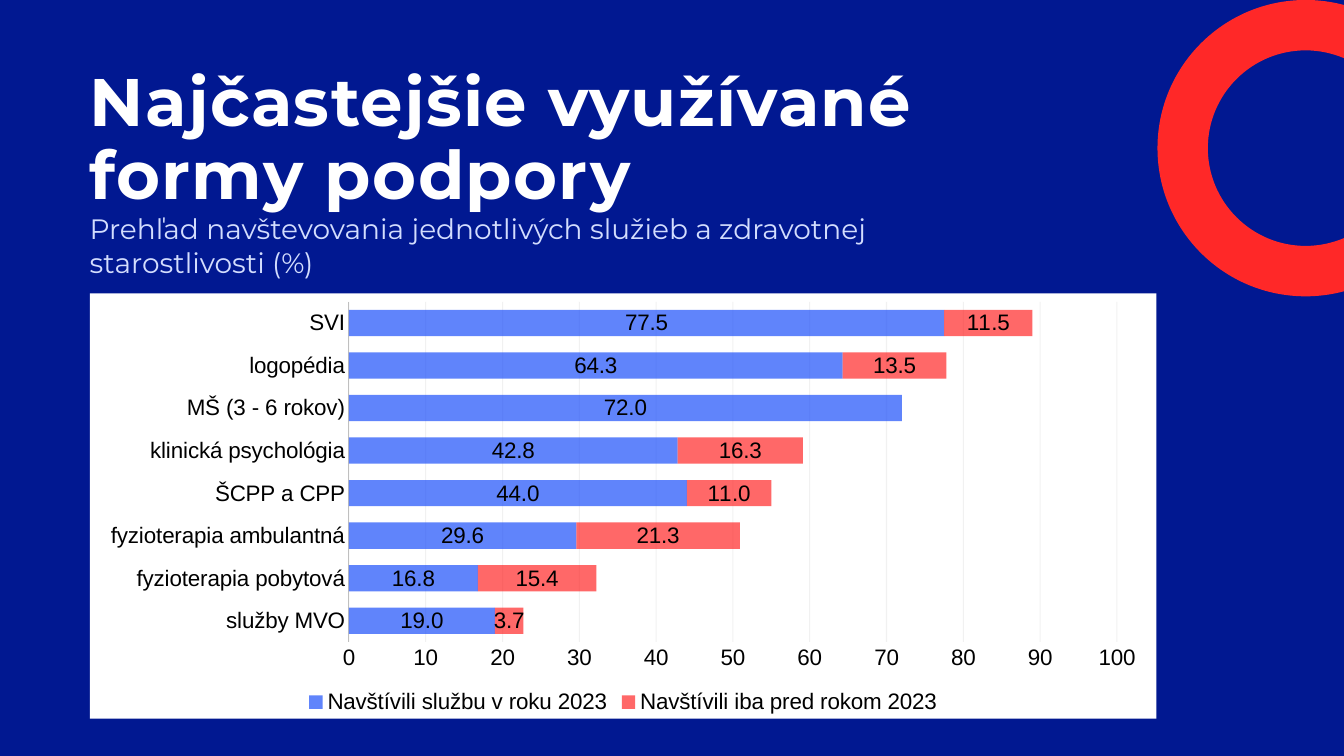
from math import acos, cos, pi, sin, tan
from lxml.etree import SubElement
from pptx import Presentation
from pptx.chart.data import CategoryChartData
from pptx.dml.color import RGBColor
from pptx.enum.chart import XL_CHART_TYPE, XL_LABEL_POSITION, XL_LEGEND_POSITION, XL_TICK_MARK
from pptx.oxml import parse_xml
from pptx.oxml.ns import nsdecls, qn
from pptx.util import Inches, Pt


def paint(fill, tone, alpha=100):
    fill.solid()
    fill.fore_color.rgb = RGBColor.from_string(tone)
    if alpha < 100:
        node = fill.fore_color._xFill[0]
        SubElement(node, qn("a:alpha")).set("val", str(alpha * 1000))


def write(box, text, size, tone, bold=False):
    frame = slide.shapes.add_textbox(*[Inches(n) for n in box]).text_frame
    frame.word_wrap = True
    run = frame.paragraphs[0].add_run()
    run.text = text
    run.font.name = "Montserrat"
    run.font.size = Pt(size)
    run.font.bold = bold
    paint(run.font.fill, tone)
    return frame


WIDE, HIGH = 13.33, 7.5
deck = Presentation()
deck.slide_width, deck.slide_height = Inches(WIDE), Inches(HIGH)
slide = deck.slides.add_slide(deck.slide_layouts[6])
paint(slide.background.fill, "011891")

mid_x, mid_y = 12.95, 1.47
ring = []
for radius, way in ((1.47, 1), (0.97, -1)):
    edge = acos((WIDE - mid_x) / radius)
    knots = [edge, pi / 2, pi, 3 * pi / 2, 2 * pi - edge][::way]
    unit = [(cos(knots[0]), sin(knots[0]))]
    for a, b in zip(knots, knots[1:]):
        k = 4 / 3 * tan((b - a) / 4)
        unit += [(cos(a) - k * sin(a), sin(a) + k * cos(a)),
                 (cos(b) + k * sin(b), sin(b) - k * cos(b)),
                 (cos(b), sin(b))]
    ring += [(Inches(mid_x + radius * x), Inches(mid_y + radius * y)) for x, y in unit]
pen = slide.shapes.build_freeform(*ring[0])
pen.add_line_segments(ring[1:], close=True)
hoop = pen.convert_to_shape()
sides = hoop._element.findall(".//" + qn("a:lnTo"))
half = len(sides) // 2
for arc in (sides[:half], sides[half + 1:]):
    for first, second, third in zip(arc[::3], arc[1::3], arc[2::3]):
        curve = SubElement(first.getparent(), qn("a:cubicBezTo"))
        first.addprevious(curve)
        for side in (first, second, third):
            curve.append(side[0])
            side.getparent().remove(side)
hoop.shadow.inherit = False
paint(hoop.fill, "FF2828")
hoop.line.fill.background()

title = write((0.89, 0.68, 9.51, 2), "Najčastejšie využívané formy podpory", 48, "FFFFFF", True)
title.margin_left = title.margin_right = title.margin_top = title.margin_bottom = 0
title.paragraphs[0].line_spacing = 0.9
title.paragraphs[0].runs[0].font._element.set("spc", "100")

rows = [
    ("služby MVO", 19, 3.7),
    ("fyzioterapia pobytová", 16.8, 15.4),
    ("fyzioterapia ambulantná", 29.6, 21.3),
    ("ŠCPP a CPP", 44, 11),
    ("klinická psychológia", 42.8, 16.3),
    ("MŠ (3 - 6 rokov)", 72, 0),
    ("logopédia", 64.3, 13.5),
    ("SVI", 77.5, 11.5),
]
names, now, past = zip(*rows)
data = CategoryChartData(number_format="0.0")
data.categories = names
data.add_series("Navštívili službu v roku 2023", now)
data.add_series("Navštívili iba pred rokom 2023", past)
box = [Inches(n) for n in (0.89, 2.91, 10.58, 4.22)]
chart = slide.shapes.add_chart(XL_CHART_TYPE.BAR_STACKED, *box, data).chart
chart.has_title = False
chart.has_legend = True
chart.legend.position = XL_LEGEND_POSITION.BOTTOM
chart.legend.include_in_layout = False

cat, val = chart.category_axis, chart.value_axis
val.minimum_scale, val.maximum_scale, val.major_unit = 0, 100, 10
val.tick_labels.number_format = "0"
val.tick_labels.number_format_is_linked = False
for axis in (cat, val):
    axis.major_tick_mark = axis.minor_tick_mark = XL_TICK_MARK.NONE
paint(cat.format.line.fill, "BFBFBF")
cat.format.line.width = Pt(0.75)
val.format.line.fill.background()
val.has_major_gridlines = True
grid = val.major_gridlines.format.line
paint(grid.fill, "D9D9D9", 35)
grid.width = Pt(0.75)

plot = chart.plots[0]
plot.gap_width, plot.overlap = 62, 100
plot.vary_by_categories = False
fonts = [chart.font, chart.legend.font, cat.tick_labels.font, val.tick_labels.font]
for series, tone in zip(plot.series, ("1D50FA", "FF2828")):
    paint(series.format.fill, tone, 70)
    series.format.line.fill.background()
    labels = series.data_labels
    labels.show_value = True
    labels.number_format = "0.0"
    labels.number_format_is_linked = False
    labels.position = XL_LABEL_POSITION.CENTER
    fonts.append(labels.font)
for font in fonts:
    font.name, font.size = "Arial", Pt(16)
    paint(font.fill, "000000")

blank = f'<c:dLbl {nsdecls("c")}><c:idx val="{past.index(0)}"/><c:delete val="1"/></c:dLbl>'
labels._element.insert(0, parse_xml(blank))

root = chart._chartSpace
back = f'<c:spPr {nsdecls("c", "a")}><a:solidFill><a:srgbClr val="FFFFFF"/></a:solidFill><a:ln><a:noFill/></a:ln></c:spPr>'
root.find(qn("c:chart")).addnext(parse_xml(back))
area = root.find(".//" + qn("c:plotArea"))
for old in area.findall(qn("c:layout")):
    area.remove(old)
layout = parse_xml(f'<c:layout {nsdecls("c")}><c:manualLayout/></c:layout>')
parts = [("layoutTarget", "inner"), ("xMode", "edge"), ("yMode", "edge"),
         ("x", "0.243"), ("y", "0.02"), ("w", "0.72"), ("h", "0.8")]
for tag, part in parts:
    SubElement(layout[0], qn("c:" + tag)).set("val", part)
area.insert(0, layout)

write((0.79, 2.05, 8.6, 0.77),
      "Prehľad navštevovania jednotlivých služieb a zdravotnej starostlivosti (%)", 20, "D3DDFE")

deck.save("out.pptx")
